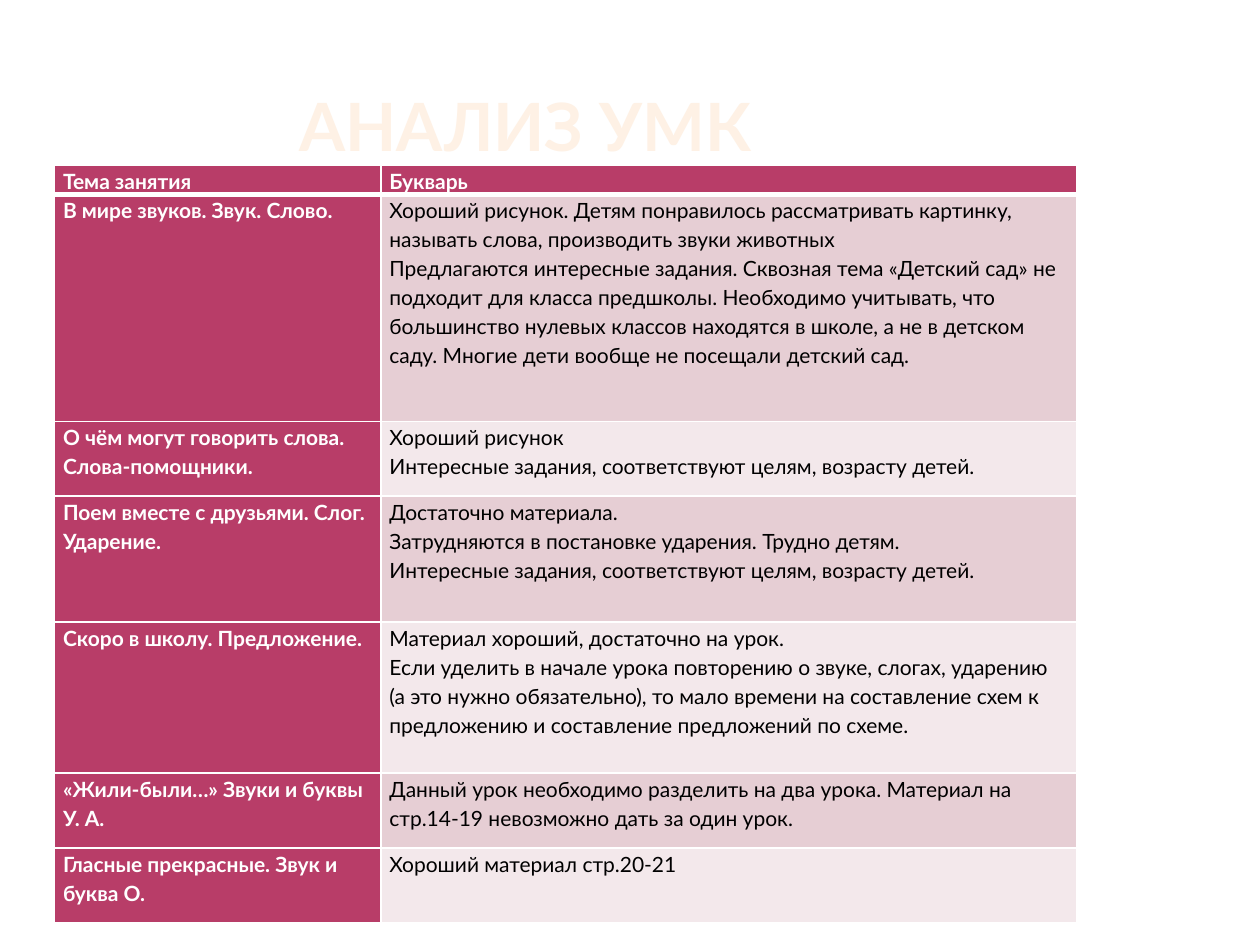
from lxml import etree
from pptx import Presentation
from pptx import util as u
from pptx.dml import color
from pptx.enum import text
from pptx.oxml import ns

FONT = "Lato"
COLORS = {
    "accent": "B83D68",
    "band_dark": "E6CED4",
    "band_light": "F3E8EB",
    "white": "FFFFFF",
    "black": "000000",
    "title": "FEF1E5",
}
COLUMN_WIDTHS = [6.58, 14.02]
ROW_HEIGHTS = [0.56, 4.58, 1.5, 2.54, 3.05, 1.51, 1.5]
ROWS = [
    ("Тема занятия", "Букварь"),
    ("В мире звуков. Звук. Слово.",
     "Хороший рисунок. Детям понравилось рассматривать картинку, называть слова, "
     "производить звуки животных\n"
     "Предлагаются интересные задания. Сквозная тема «Детский сад» не подходит для класса "
     "предшколы. Необходимо учитывать, что большинство нулевых классов находятся в школе, "
     "а не в детском саду. Многие дети вообще не посещали детский сад."),
    ("О чём могут говорить слова. Слова-помощники.",
     "Хороший рисунок\nИнтересные задания, соответствуют целям, возрасту детей."),
    ("Поем вместе с друзьями. Слог. Ударение.",
     "Достаточно материала.\nЗатрудняются в постановке ударения. Трудно детям.\n"
     "Интересные задания, соответствуют целям, возрасту детей."),
    ("Скоро в школу. Предложение.",
     "Материал хороший, достаточно на урок.\n"
     "Если уделить в начале урока повторению о звуке, слогах, ударению (а это нужно "
     "обязательно), то мало времени на составление схем к предложению и составление "
     "предложений по схеме."),
    ("«Жили-были…» Звуки и буквы У. А.",
     "Данный урок необходимо разделить на два урока. Материал на стр.14-19 невозможно "
     "дать за один урок."),
    ("Гласные прекрасные. Звук и буква О.", "Хороший материал стр.20-21"),
]


def rgb(name):
    return color.RGBColor.from_string(COLORS[name])


def format_span(span, size, ink, bold):
    span.font.name, span.font.size, span.font.bold = FONT, u.Pt(size), bold
    span.font.color.rgb = rgb(ink)


def add_title(page):
    title = page.shapes.title
    title.left, title.top = u.Cm(0.71), u.Cm(0.93)
    title.width, title.height = u.Cm(19.81), u.Cm(2.39)
    frame = title.text_frame
    frame.text = "АНАЛИЗ УМК"
    frame.word_wrap = True
    frame.auto_size = text.MSO_AUTO_SIZE.NONE
    frame.vertical_anchor = text.MSO_ANCHOR.BOTTOM
    frame.margin_left = frame.margin_right = u.Cm(0.13)
    frame.margin_top = frame.margin_bottom = 0
    para = frame.paragraphs[0]
    para.alignment = text.PP_ALIGN.LEFT
    para._p.get_or_add_pPr().set("marL", str(u.Cm(5.2)))
    format_span(para.runs[0], 38, "title", True)


def add_borders(cell, bottom):
    properties = cell._tc.get_or_add_tcPr()
    for tag, width in (("a:lnL", 1), ("a:lnR", 1), ("a:lnT", 1), ("a:lnB", bottom)):
        line = etree.SubElement(properties, ns.qn(tag), w=str(u.Pt(width)))
        fill = etree.SubElement(line, ns.qn("a:solidFill"))
        etree.SubElement(fill, ns.qn("a:srgbClr"), val=COLORS["white"])


def fill_cell(cell, wording, fill, ink, bold):
    cell.margin_left = cell.margin_right = u.Cm(0.17)
    cell.margin_top = cell.margin_bottom = 0
    cell.text_frame.text = wording
    for para in cell.text_frame.paragraphs:
        para.line_spacing = 1.15
        for span in para.runs:
            format_span(span, 12, ink, bold)
    cell.fill.solid()
    cell.fill.fore_color.rgb = rgb(fill)


def add_review_table(page):
    table = page.shapes.add_table(
        len(ROWS), len(COLUMN_WIDTHS), u.Cm(1.1), u.Cm(3.33),
        u.Cm(sum(COLUMN_WIDTHS)), u.Cm(sum(ROW_HEIGHTS))).table
    for column, width in zip(table.columns, COLUMN_WIDTHS):
        column.width = u.Cm(width)
    for row, height in zip(table.rows, ROW_HEIGHTS):
        row.height = u.Cm(height)
    table.first_col = True
    for i, wordings in enumerate(ROWS):
        band = "band_dark" if i % 2 else "band_light"
        for j, wording in enumerate(wordings):
            heading = i == 0 or j == 0
            cell = table.cell(i, j)
            add_borders(cell, 3 if i == 0 else 1)
            fill_cell(cell, wording, "accent" if heading else band,
                      "white" if heading else "black", heading)


def main():
    deck = Presentation()
    deck.slide_width, deck.slide_height = u.Cm(25.4), u.Cm(19.05)
    page = deck.slides.add_slide(deck.slide_layouts[5])
    add_title(page)
    add_review_table(page)
    deck.save("out.pptx")


if __name__ == "__main__":
    main()
